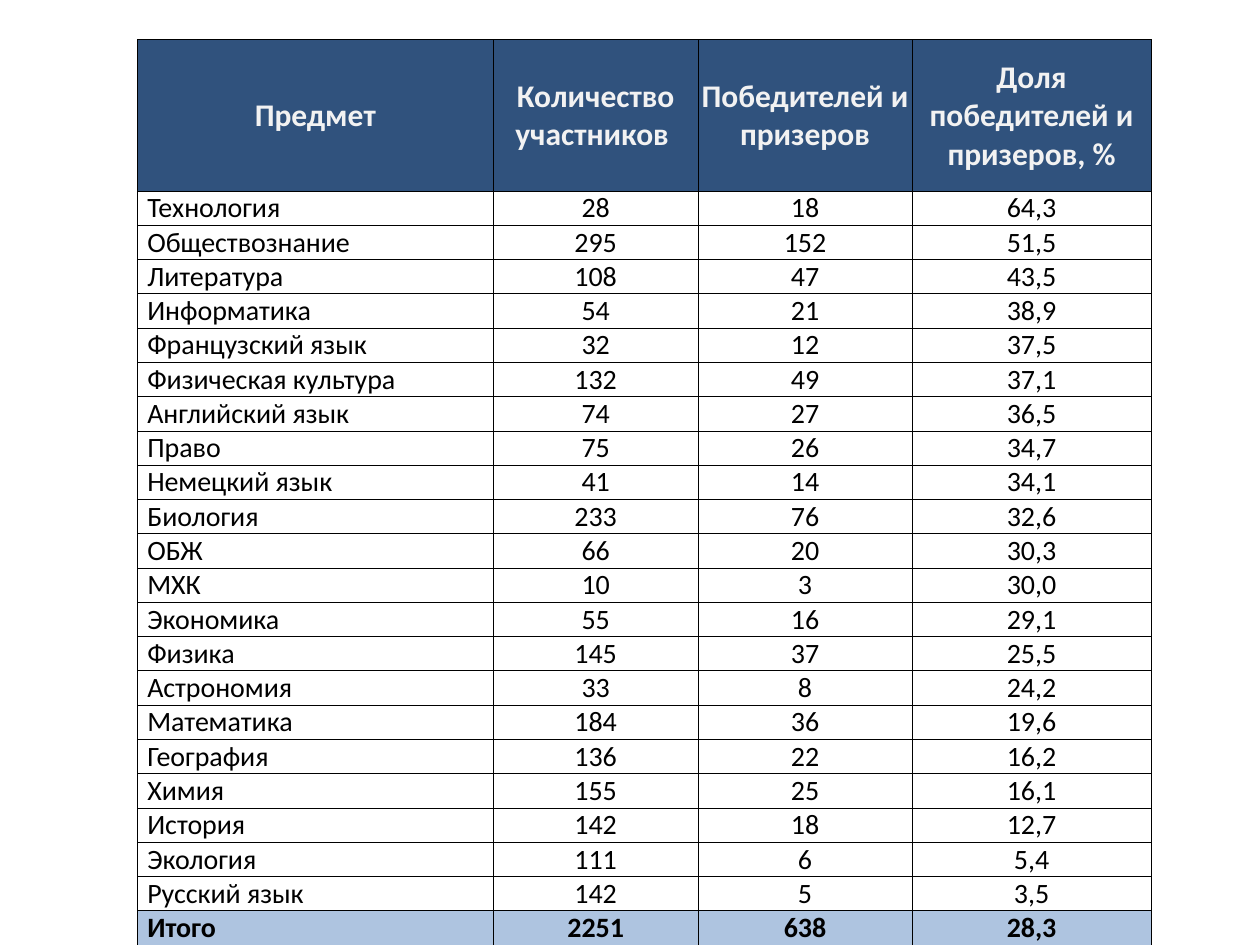
from lxml.etree import SubElement
from pptx import Presentation
from pptx.dml.color import RGBColor
from pptx.enum.text import MSO_ANCHOR, PP_ALIGN
from pptx.oxml.ns import qn
from pptx.util import Cm, Pt

NAVY = RGBColor(0x30, 0x52, 0x7D)
LIGHT_BLUE = RGBColor(0xAE, 0xC4, 0xE0)
OFF_WHITE = RGBColor(0xF2, 0xF2, 0xF2)
BLACK = RGBColor(0, 0, 0)

HEADINGS = ("Предмет", "Количество участников ", "Победителей и призеров",
            "Доля победителей и призеров, %")
SUBJECTS = (
    ("Технология", "28", "18", "64,3"),
    ("Обществознание", "295", "152", "51,5"),
    ("Литература", "108", "47", "43,5"),
    ("Информатика", "54", "21", "38,9"),
    ("Французский язык", "32", "12", "37,5"),
    ("Физическая культура", "132", "49", "37,1"),
    ("Английский язык", "74", "27", "36,5"),
    ("Право", "75", "26", "34,7"),
    ("Немецкий язык", "41", "14", "34,1"),
    ("Биология", "233", "76", "32,6"),
    ("ОБЖ", "66", "20", "30,3"),
    ("МХК", "10", "3", "30,0"),
    ("Экономика", "55", "16", "29,1"),
    ("Физика", "145", "37", "25,5"),
    ("Астрономия", "33", "8", "24,2"),
    ("Математика", "184", "36", "19,6"),
    ("География", "136", "22", "16,2"),
    ("Химия", "155", "25", "16,1"),
    ("История", "142", "18", "12,7"),
    ("Экология", "111", "6", "5,4"),
    ("Русский язык", "142", "5", "3,5"),
)
TOTAL = ("Итого", "2251", "638", "28,3")

COLUMN_SHARES = (0.351, 0.202, 0.211, 0.236)
HEADER_HEIGHT = Cm(3.05)
ROW_HEIGHT = Cm(0.61)


def write_text(cell, text, size=16, color=BLACK, bold=False,
               align=PP_ALIGN.CENTER, anchor=MSO_ANCHOR.BOTTOM, indent=0):
    cell.vertical_anchor = anchor
    paragraph = cell.text_frame.paragraphs[0]
    paragraph.alignment = align
    if indent:
        paragraph._p.get_or_add_pPr().set("marL", str(indent))
    run = paragraph.add_run()
    run.text = text
    run.font.name = "Calibri"
    run.font.size = Pt(size)
    run.font.bold = bold
    run.font.color.rgb = color


def style_cell(cell, fill=None, inset=0):
    cell.margin_left = cell.margin_right = cell.margin_top = inset
    cell.margin_bottom = 0
    # Borders come before the fill in the cell properties
    properties = cell._tc.get_or_add_tcPr()
    for side in ("a:lnL", "a:lnR", "a:lnT", "a:lnB"):
        border = SubElement(properties, qn(side), w=str(Pt(0.5)))
        solid = SubElement(border, qn("a:solidFill"))
        SubElement(solid, qn("a:srgbClr"), val=str(BLACK))
    if fill is None:
        cell.fill.background()
    else:
        cell.fill.solid()
        cell.fill.fore_color.rgb = fill


def add_results_table(slide, left, top, width, height):
    records = SUBJECTS + (TOTAL,)
    frame = slide.shapes.add_table(len(records) + 1, len(HEADINGS),
                                   left, top, width, height)
    results = frame.table
    results.first_row = results.horz_banding = False
    for column, share in zip(results.columns, COLUMN_SHARES):
        column.width = int(width * share)
    for row in results.rows:
        row.height = ROW_HEIGHT
    results.rows[0].height = HEADER_HEIGHT
    frame.height = height

    # Header row
    for col, heading in enumerate(HEADINGS):
        cell = results.cell(0, col)
        style_cell(cell, fill=NAVY, inset=Cm(0.02))
        write_text(cell, heading, size=18, color=OFF_WHITE, bold=True,
                   anchor=MSO_ANCHOR.MIDDLE)

    # Subject rows and the total
    for row, record in enumerate(records, start=1):
        is_total = record is TOTAL
        for col, value in enumerate(record):
            cell = results.cell(row, col)
            style_cell(cell, fill=LIGHT_BLUE if is_total else None)
            write_text(cell, value, bold=is_total,
                       align=PP_ALIGN.LEFT if col == 0 else PP_ALIGN.CENTER,
                       anchor=MSO_ANCHOR.MIDDLE if col == 1 else MSO_ANCHOR.BOTTOM,
                       indent=Cm(0.2) if col == 0 else 0)


def main():
    presentation = Presentation()
    presentation.slide_width = Cm(25.4)
    presentation.slide_height = Cm(19.05)
    slide = presentation.slides.add_slide(presentation.slide_layouts[6])
    add_results_table(slide, Cm(2.77), Cm(0.8), Cm(20.44), Cm(17.96))
    presentation.save("out.pptx")


if __name__ == "__main__":
    main()
